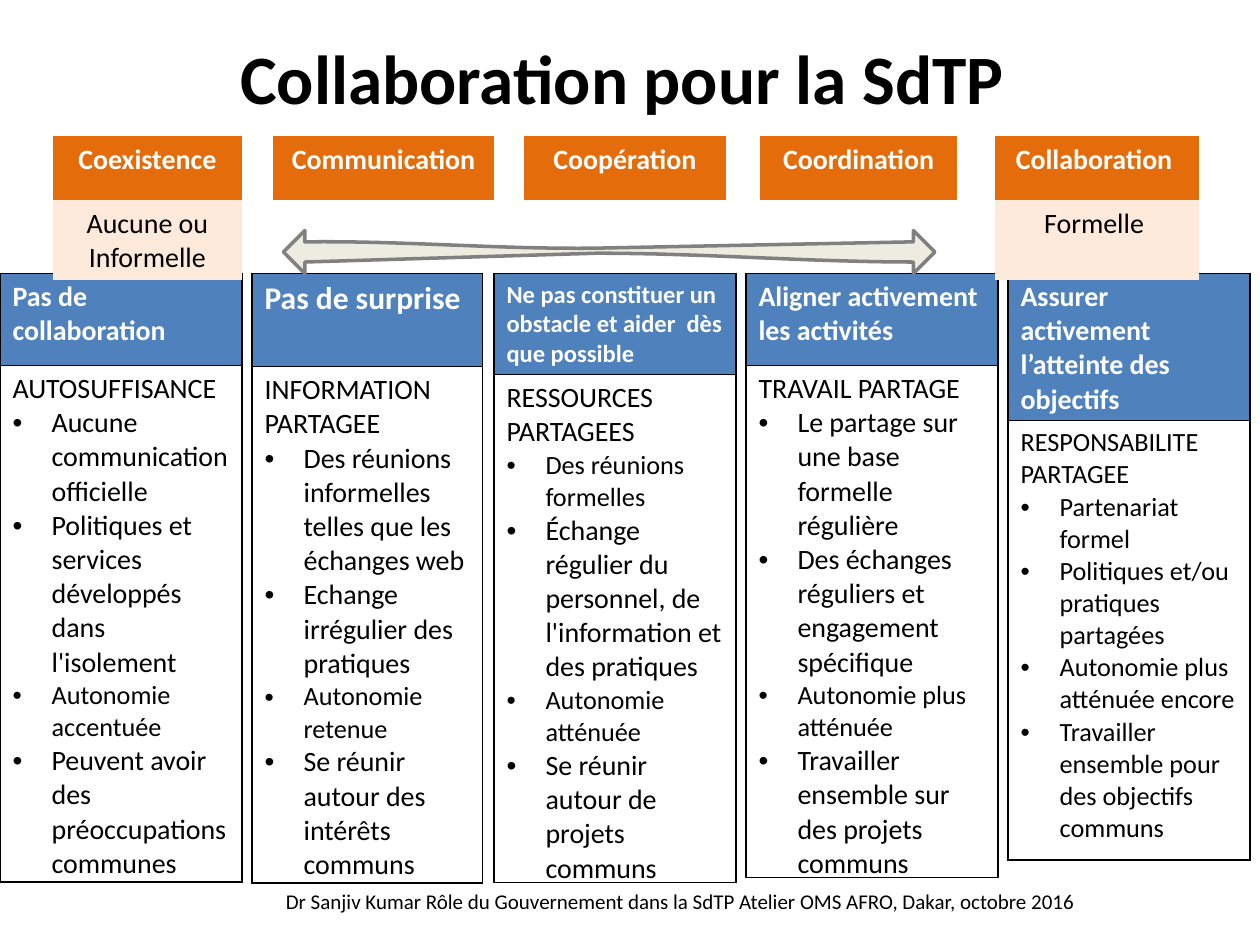
import pptx
import pptx.util
import pptx.dml.color
import pptx.enum.text
import pptx.oxml
import pptx.oxml.ns
from dataclasses import dataclass

Inches = pptx.util.Inches
Pt = pptx.util.Pt
qn = pptx.oxml.ns.qn
ALIGN = pptx.enum.text.PP_ALIGN
NO_STYLE = "{2D5ABB26-0587-4C30-8999-92F81FD0307C}"


@dataclass
class Theme:
    font: str = "Calibri"
    black: str = "000000"
    white: str = "FFFFFF"
    blue: str = "4F81BD"
    orange: str = "E46C0A"
    peach: str = "FDEADA"
    cream: str = "EEECE1"
    grey: str = "808080"
    title: float = 39.6
    large: float = 18
    body: float = 16
    compact: float = 15
    small: float = 14
    footer: float = 12


theme = Theme()


def write(p, text, size, color, bold=False, align=ALIGN.LEFT):
    p.alignment = align
    r = p.add_run()
    r.text = text
    formats = {"name": theme.font, "size": Pt(size), "bold": bold}
    for name, value in formats.items():
        setattr(r.font, name, value)
    r.font.color.rgb = pptx.dml.color.RGBColor.from_string(color)


def make_table(s, left, top, widths, heights):
    frame = s.shapes.add_table(len(heights), len(widths), Inches(left), Inches(top),
                               Inches(sum(widths)), Inches(sum(heights)))
    table = frame.table
    for name in ("first_row", "horz_banding"):
        setattr(table, name, False)
    table._tbl.tblPr.find(qn("a:tableStyleId")).text = NO_STYLE
    for col, width in zip(table.columns, widths):
        col.width = Inches(width)
    for row, height in zip(table.rows, heights):
        row.height = Inches(height)
    return table


prs = pptx.Presentation()
prs.slide_width, prs.slide_height = Inches(10), Inches(7.5)
s = prs.slides.add_slide(prs.slide_layouts[5])

title = s.shapes.title
box = {"left": 0.5, "top": 0.3, "width": 9, "height": 0.62}
for name, value in box.items():
    setattr(title, name, Inches(value))
tf = title.text_frame
tf.auto_size = pptx.enum.text.MSO_AUTO_SIZE.NONE
tf.vertical_anchor = pptx.enum.text.MSO_ANCHOR.MIDDLE
write(tf.paragraphs[0], "Collaboration pour la SdTP ", theme.title, theme.black, True, ALIGN.CENTER)

footer = s.shapes.add_textbox(Inches(2.17), Inches(7), Inches(6.78), Inches(0.3))
tf = footer.text_frame
tf.word_wrap = True
write(tf.paragraphs[0],
      "Dr Sanjiv Kumar Rôle du Gouvernement dans la SdTP Atelier OMS AFRO, Dakar, octobre 2016",
      theme.footer, theme.black)

stages = [
    (0, 1.92, (0.73, 4.1), "Pas de collaboration", theme.body, [
        ("AUTOSUFFISANCE", theme.body),
        ("Aucune communication officielle", theme.body),
        ("Politiques et services développés dans l'isolement", theme.body),
        ("Autonomie accentuée", theme.compact),
        ("Peuvent avoir des préoccupations communes", theme.body)]),
    (2, 1.83, (0.74, 4.1), "Pas de surprise", theme.large, [
        ("INFORMATION PARTAGEE", theme.body),
        ("Des réunions informelles telles que les échanges web", theme.body),
        ("Echange irrégulier des pratiques", theme.body),
        ("Autonomie retenue", theme.compact),
        ("Se réunir autour des intérêts communs", theme.body)]),
    (3.92, 1.92, (0.8, 3.78), "Ne pas constituer un obstacle et aider  dès que possible", theme.small, [
        ("RESSOURCES PARTAGEES", theme.body),
        ("Des réunions formelles", theme.compact),
        ("Échange régulier du personnel, de l'information et des pratiques", theme.body),
        ("Autonomie atténuée", theme.compact),
        ("Se réunir autour de projets communs", theme.body)]),
    (5.92, 2, (0.73, 3.77), "Aligner activement les activités", theme.body, [
        ("TRAVAIL PARTAGE", theme.body),
        ("Le partage sur une base formelle régulière", theme.body),
        ("Des échanges réguliers et engagement spécifique", theme.body),
        ("Autonomie plus atténuée", theme.compact),
        ("Travailler ensemble sur des projets communs", theme.body)]),
    (8, 1.92, (1.1, 3.49), "Assurer activement l’atteinte des objectifs", theme.body, [
        ("RESPONSABILITE PARTAGEE", theme.compact),
        ("Partenariat formel", theme.compact),
        ("Politiques et/ou pratiques partagées", theme.compact),
        ("Autonomie plus atténuée encore", theme.compact),
        ("Travailler ensemble pour des objectifs communs", theme.compact)]),
]
for left, width, heights, heading, size, lines in stages:
    table = make_table(s, left, 2.17, [width], heights)
    head, body = table.cell(0, 0), table.cell(1, 0)
    write(head.text_frame.paragraphs[0], heading, size, theme.white, True)
    tf = body.text_frame
    for i, (text, size) in enumerate(lines):
        p = tf.add_paragraph() if i else tf.paragraphs[0]
        write(p, text, size, theme.black)
        if i:
            pPr = p._p.get_or_add_pPr()
            pPr.set("marL", str(Inches(0.31)))
            pPr.set("indent", str(Inches(-0.31)))
            pPr.append(pptx.oxml.parse_xml(
                f'<a:buFont {pptx.oxml.ns.nsdecls("a")} typeface="Arial"/>'))
            pPr.append(pptx.oxml.parse_xml(
                f'<a:buChar {pptx.oxml.ns.nsdecls("a")} char="•"/>'))
    for cell, color in ((head, theme.blue), (body, theme.white)):
        tcPr = cell._tc.get_or_add_tcPr()
        for side in ("lnL", "lnR", "lnT", "lnB"):
            tcPr.append(pptx.oxml.parse_xml(
                f'<a:{side} {pptx.oxml.ns.nsdecls("a")} w="{Pt(1)}"><a:solidFill>'
                f'<a:srgbClr val="{theme.black}"/></a:solidFill></a:{side}>'))
        cell.fill.solid()
        cell.fill.fore_color.rgb = pptx.dml.color.RGBColor.from_string(color)

widths = [1.5, 0.25, 1.75, 0.23, 1.6, 0.27, 1.57, 0.3, 1.62]
levels = make_table(s, 0.42, 1.08, widths, [0.51, 0.31])
levels.cell(1, 1).merge(levels.cell(1, 7))
names = ["Coexistence", "Communication", "Coopération", "Coordination", "Collaboration "]
labels = [(0, 2 * i, name, theme.orange, theme.white, True) for i, name in enumerate(names)]
labels += [(1, 0, "Aucune ou Informelle", theme.peach, theme.black, False),
           (1, 8, "Formelle ", theme.peach, theme.black, False)]
for row, col, text, fill, color, bold in labels:
    cell = levels.cell(row, col)
    cell.fill.solid()
    cell.fill.fore_color.rgb = pptx.dml.color.RGBColor.from_string(fill)
    write(cell.text_frame.paragraphs[0], text, theme.body, color, bold, ALIGN.CENTER)

upper = [(2.42, 1.92), (3.21, 1.91), (3.95, 1.98), (4.74, 1.97)]
lower = [(7.25, 2.08), (6.41, 2.08), (5.58, 2.01), (4.74, 2.01)]
curves = []
for curve in (upper, lower):
    points = []
    for t in [i / 16 for i in range(17)]:
        weights = ((1 - t) ** 3, 3 * t * (1 - t) ** 2, 3 * t * t * (1 - t), t ** 3)
        points.append(tuple(sum(w * pt[axis] for w, pt in zip(weights, curve)) for axis in (0, 1)))
    curves.append(points)
outline = [(2.25, 2), (2.42, 1.83), *curves[0], (7.25, 1.92), (7.25, 1.83), (7.42, 2),
           (7.25, 2.17), *curves[1], (2.42, 2.08), (2.42, 2.17)]
outline = [(Inches(x), Inches(y)) for x, y in outline]
builder = s.shapes.build_freeform(*outline[0])
builder.add_line_segments(outline[1:], close=True)
arrow = builder.convert_to_shape()
arrow.shadow.inherit = False
arrow.fill.solid()
arrow.fill.fore_color.rgb = pptx.dml.color.RGBColor.from_string(theme.cream)
arrow.line.color.rgb = pptx.dml.color.RGBColor.from_string(theme.grey)
arrow.line.width = Pt(2)

prs.save("out.pptx")
